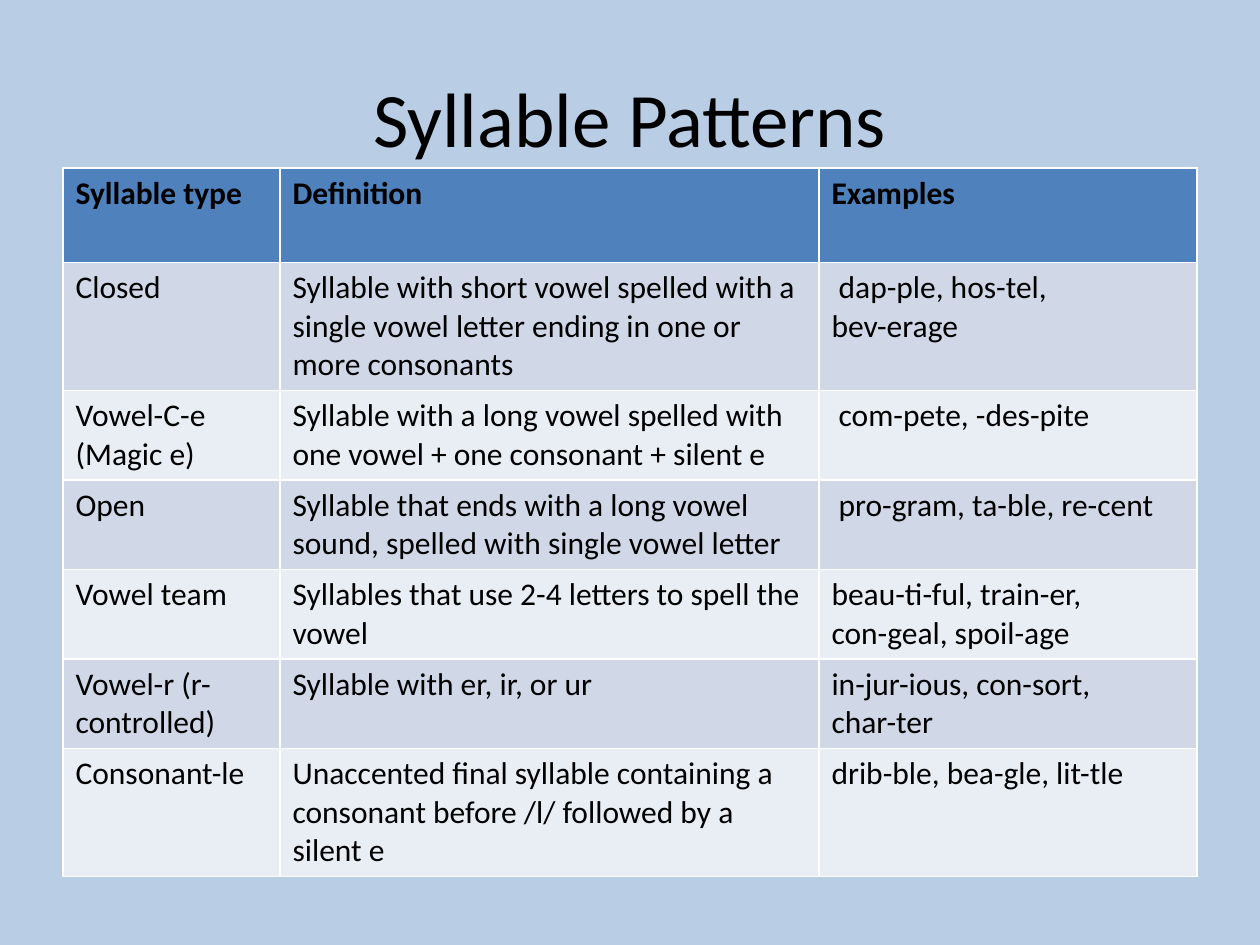
"""Build the slide of syllable patterns with their definitions and examples."""
import pptx
import pptx.util
import pptx.dml.color
import pptx.enum.text

Pt = pptx.util.Pt
Color = pptx.dml.color.RGBColor.from_string
theme = {
    "font": "Calibri", "title": Pt(44), "body": Pt(18),
    "back": Color("B9CDE5"), "ink": Color("000000"), "head": Color("4F81BD"),
    "bands": [Color("E9EDF4"), Color("D0D8E8")],
}
widths = [124, 308, 216]
heights = [54, 73, 51, 51, 51, 51, 73]
rows = [
    ("Syllable type", "Definition", "Examples"),
    ("Closed",
     "Syllable with short vowel spelled with a single vowel letter ending in one or more consonants",
     " dap-ple, hos-tel,\vbev-erage"),
    ("Vowel-C-e\n(Magic e)",
     "Syllable with a long vowel spelled with one vowel + one consonant + silent e",
     " com-pete, -des-pite"),
    ("Open",
     "Syllable that ends with a long vowel sound, spelled with single vowel letter",
     " pro-gram, ta-ble, re-cent"),
    ("Vowel team",
     "Syllables that use 2-4 letters to spell the vowel",
     "beau-ti-ful, train-er,\vcon-geal, spoil-age"),
    ("Vowel-r (r-controlled)",
     "Syllable with er, ir, or ur",
     "in-jur-ious, con-sort,\vchar-ter"),
    ("Consonant-le",
     "Unaccented final syllable containing a consonant before /l/ followed by a silent e",
     "drib-ble, bea-gle, lit-tle"),
]


def style(item, values):
    for name, value in values.items():
        setattr(item, name, value)


def write(frame, text, size, bold=False):
    frame.text = text
    for para in frame.paragraphs:
        for run in para.runs:
            style(run.font, {"name": theme["font"], "size": size, "bold": bold})
            run.font.color.rgb = theme["ink"]


deck = pptx.Presentation()
style(deck, {"slide_width": Pt(720), "slide_height": Pt(540)})
slide = deck.slides.add_slide(deck.slide_layouts[5])
slide.background.fill.solid()
slide.background.fill.fore_color.rgb = theme["back"]

title = slide.shapes.title
style(title, {"left": Pt(36), "top": Pt(21.6), "width": Pt(648), "height": Pt(90)})
write(title.text_frame, "Syllable Patterns", theme["title"])
title.text_frame.vertical_anchor = pptx.enum.text.MSO_ANCHOR.MIDDLE
title.text_frame.paragraphs[0].alignment = pptx.enum.text.PP_ALIGN.CENTER

table = slide.shapes.add_table(
    len(rows), len(widths), Pt(36), Pt(96), Pt(sum(widths)), Pt(sum(heights))).table
for col, width in zip(table.columns, widths):
    col.width = Pt(width)
for r, (row, height) in enumerate(zip(rows, heights)):
    table.rows[r].height = Pt(height)
    for c, text in enumerate(row):
        cell = table.cell(r, c)
        write(cell.text_frame, text, theme["body"], r == 0)
        cell.fill.solid()
        cell.fill.fore_color.rgb = theme["bands"][r % 2] if r else theme["head"]

deck.save("out.pptx")
